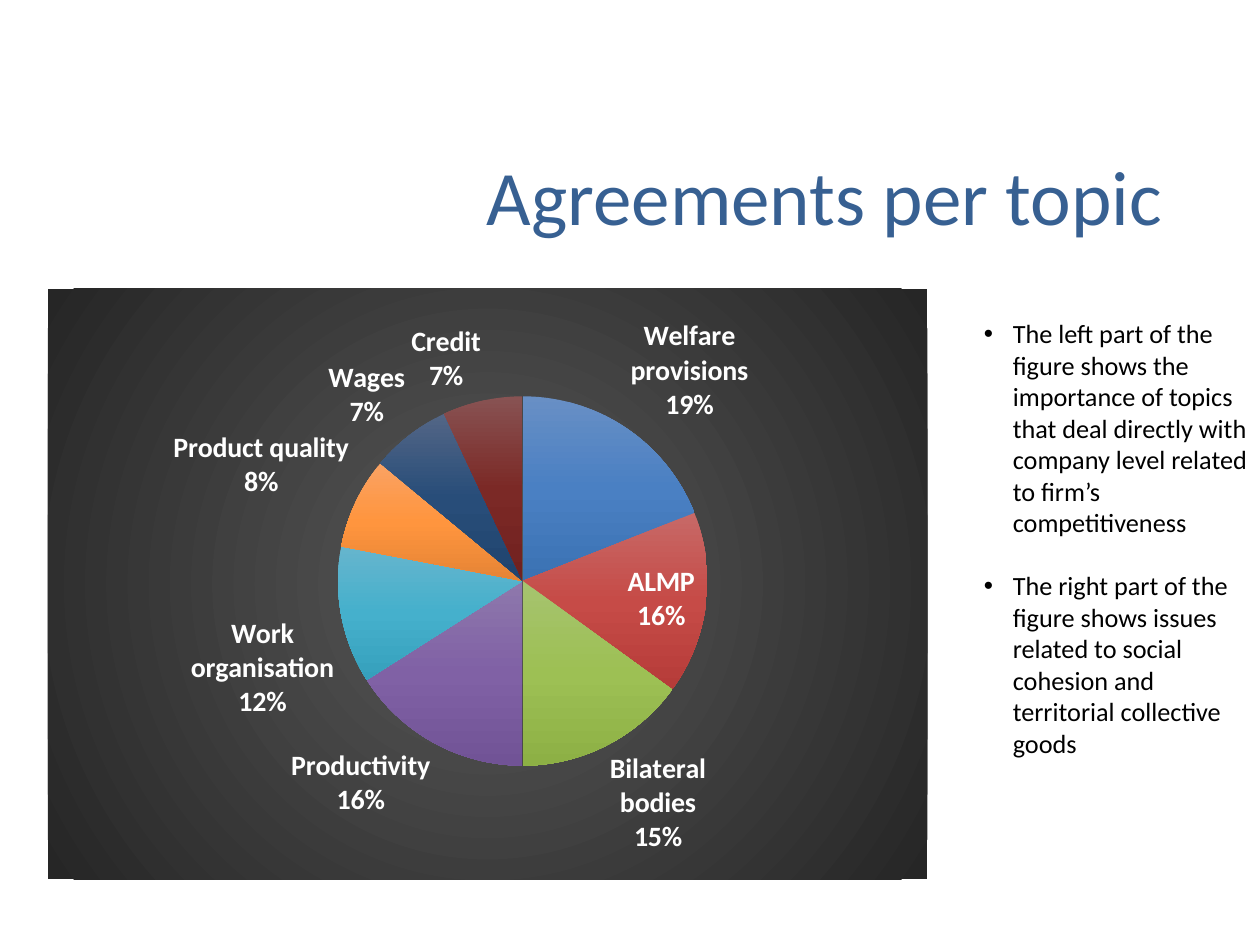
from pptx import Presentation
from pptx.chart.data import CategoryChartData
from pptx.dml.color import RGBColor
from pptx.enum.chart import XL_CHART_TYPE as ChartType, XL_LABEL_POSITION as LabelPosition
from pptx.enum.text import MSO_ANCHOR as Anchor, PP_ALIGN as Align
from pptx.oxml import parse_xml
from pptx.oxml.ns import nsdecls, qn
from pptx.util import Inches, Pt

FONT = "Calibri"
TITLE_BLUE = RGBColor(0x37, 0x60, 0x92)
BLACK = RGBColor(0, 0, 0)
WHITE = RGBColor(0xFF, 0xFF, 0xFF)


def colours(*codes):
    """Turn hex codes into a list of colours."""
    return [RGBColor.from_string(code) for code in codes]


BACKDROP = colours("595959", "262626")
TOPICS = [
    ("Welfare provisions", 19, colours("688FC5", "4A80C3", "3B72B3")),
    ("ALMP", 16, colours("C76967", "C64B47", "B63C39")),
    ("Bilateral bodies", 15, colours("A6C36F", "9DC054", "8DB045")),
    ("Productivity", 16, colours("8E78AC", "8061A5", "715396")),
    ("Work organisation", 12, colours("66B5CD", "45B0CC", "36A0BC")),
    ("Product quality", 8, colours("FAA263", "FF953E", "E58435")),
    ("Wages", 7, colours("536686", "284D79", "20446E")),
    ("Credit", 7, colours("885353", "7B2926", "71211F")),
]
NOTES = [
    "The left part of the figure shows the importance of topics that deal directly "
    "with company level related to firm’s competitiveness",
    "The right part of the figure shows issues related to social cohesion and "
    "territorial collective goods",
]


def set_font(font, size, colour, bold=False):
    """Give a font its face, size, colour and weight."""
    font.name, font.size, font.bold = FONT, Pt(size), bold
    font.color.rgb = colour


def write(para, text, size=15, colour=BLACK, align=Align.LEFT, before=0):
    """Write formatted text into a paragraph."""
    span = para.add_run()
    span.text = text
    set_font(span.font, size, colour)
    para.alignment = align
    para.space_before = Pt(before)


def add_bullet(para, indent):
    """Give a paragraph a hanging bullet."""
    props = para._p.get_or_add_pPr()
    props.set("marL", str(indent))
    props.set("indent", str(-indent))
    props.append(parse_xml(f'<a:buFont {nsdecls("a")} typeface="Arial"/>'))
    props.append(parse_xml(f'<a:buChar {nsdecls("a")} char="•"/>'))


def gradient(stops, direction):
    """Build a gradient fill with evenly spaced stops."""
    step = 100000 // (len(stops) - 1)
    marks = "".join(
        f'<a:gs pos="{index * step}"><a:srgbClr val="{colour}"/></a:gs>'
        for index, colour in enumerate(stops)
    )
    return parse_xml(
        f'<a:gradFill {nsdecls("a")} rotWithShape="1"><a:gsLst>{marks}</a:gsLst>{direction}</a:gradFill>'
    )


def place_plot(chart, left, top, width, height):
    """Fix the inner plot area as fractions of the chart."""
    area = chart._chartSpace.chart.plotArea
    for old in area.findall(qn("c:layout")):
        area.remove(old)
    sizes = "".join(
        f'<c:{name} val="{value}"/>'
        for name, value in zip("xywh", (left, top, width, height))
    )
    area.insert(0, parse_xml(
        f'<c:layout {nsdecls("c")}><c:manualLayout><c:layoutTarget val="inner"/>'
        f'<c:xMode val="edge"/><c:yMode val="edge"/>{sizes}</c:manualLayout></c:layout>'
    ))


def add_title(page, left, top, width, height):
    """Place the slide title."""
    title = page.shapes.title
    title.left, title.top, title.width, title.height = left, top, width, height
    title.text_frame.vertical_anchor = Anchor.MIDDLE
    write(title.text_frame.paragraphs[0], "Agreements per topic",
          size=44, colour=TITLE_BLUE, align=Align.RIGHT)


def add_topic_pie(page, left, top, width, height):
    """Draw the pie of agreement topics on its dark backdrop."""
    data = CategoryChartData()
    data.categories = [name for name, _, _ in TOPICS]
    data.add_series("Series 1", [share for _, share, _ in TOPICS])
    chart = page.shapes.add_chart(ChartType.PIE, left, top, width, height, data).chart
    chart.has_legend = chart.has_title = False
    set_font(chart.font, 10, BLACK)
    place_plot(chart, 0.33, 0.18, 0.42, 0.63)

    backdrop = parse_xml(f'<c:spPr {nsdecls("c", "a")}><a:ln><a:noFill/></a:ln></c:spPr>')
    backdrop.insert(0, gradient(
        BACKDROP, '<a:path path="circle"><a:fillToRect l="50000" t="50000" r="50000" b="50000"/></a:path>'
    ))
    chart._chartSpace.chart.addnext(backdrop)

    plot = chart.plots[0]
    plot.vary_by_categories = True
    series = plot.series[0]
    for index, (_, _, stops) in enumerate(TOPICS):
        point = series._element.get_or_add_dPt_for_point(index)
        point.get_or_add_spPr().append(gradient(stops, '<a:lin ang="5400000" scaled="0"/>'))

    labels = series.data_labels
    set_font(labels.font, 16, WHITE, bold=True)
    labels.number_format, labels.number_format_is_linked = "0%", False
    labels.position = LabelPosition.BEST_FIT
    labels.show_value = False
    labels.show_category_name = labels.show_percentage = True
    labels._element.find(qn("c:showBubbleSize")).addnext(
        parse_xml(f'<c:separator {nsdecls("c")}>\n</c:separator>')
    )


def add_notes(page, left, top, width, height):
    """Place the bulleted reading of the chart."""
    frame = page.shapes.add_textbox(left, top, width, height).text_frame
    frame.word_wrap = True
    for index, note in enumerate(NOTES):
        para = frame.add_paragraph() if index else frame.paragraphs[0]
        add_bullet(para, Inches(0.23))
        write(para, note, before=18 if index else 0)


def main():
    """Build and save the slide."""
    deck = Presentation()
    deck.slide_width, deck.slide_height = Inches(10), Inches(7.5)
    page = deck.slides.add_slide(deck.slide_layouts[5])
    add_title(page, Inches(0.71), Inches(1), Inches(8.62), Inches(1.09))
    add_topic_pie(page, Inches(0.38), Inches(2.29), Inches(6.98), Inches(4.69))
    add_notes(page, Inches(7.71), Inches(2.47), Inches(2.29), Inches(3.86))
    deck.save("out.pptx")


if __name__ == "__main__":
    main()
